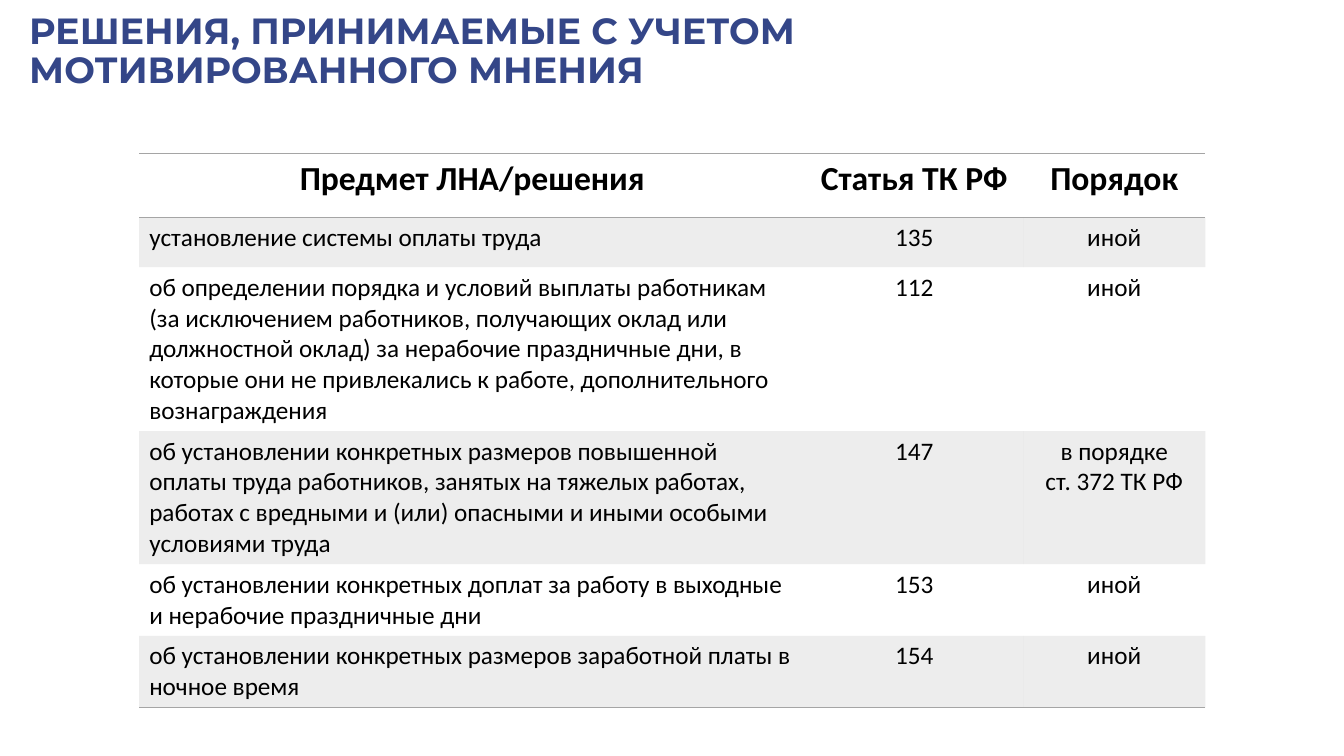
import dataclasses

import pptx
import pptx.dml.color
import pptx.enum.text
import pptx.oxml
import pptx.oxml.ns
import pptx.util

Pt = pptx.util.Pt
ALIGN = pptx.enum.text.PP_ALIGN
GREY = "A5A5A5"
NO_STYLE = "{2D5ABB26-0587-4C30-8999-92F81FD0307C}"
COLUMN_WIDTHS = (475.9, 155.5, 130.2)


@dataclasses.dataclass(frozen=True)
class Decision:
    subject: str
    article: str
    procedure: tuple[str, ...]
    height: float
    size: float = 18
    header: bool = False
    shaded: bool = False
    ruled_top: bool = False
    ruled_bottom: bool = False


DECISIONS = (
    Decision("Предмет ЛНА/решения", "Статья ТК РФ", ("Порядок",), 46, size=24,
             header=True, ruled_top=True, ruled_bottom=True),
    Decision("установление системы оплаты труда", "135", ("иной",), 35.5, shaded=True),
    Decision("об определении порядка и условий выплаты работникам (за исключением "
             "работников, получающих оклад или должностной оклад) за нерабочие "
             "праздничные дни, в которые они не привлекались к работе, "
             "дополнительного вознаграждения", "112", ("иной",), 117),
    Decision("об установлении конкретных размеров повышенной оплаты труда работников, "
             "занятых на тяжелых работах, работах с вредными и (или) опасными и иными "
             "особыми условиями труда", "147", ("в порядке", "ст. 372 ТК РФ"), 95,
             shaded=True),
    Decision("об установлении конкретных доплат за работу в выходные и нерабочие "
             "праздничные дни", "153", ("иной",), 51),
    Decision("об установлении конкретных размеров заработной платы в ночное время",
             "154", ("иной",), 51, shaded=True, ruled_bottom=True),
)


def paint(target, color: str) -> None:
    target.rgb = pptx.dml.color.RGBColor.from_string(color)


def add_run(paragraph, text: str, font: str, size: float, color: str, bold: bool) -> None:
    run = paragraph.add_run()
    run.text = text
    run.font.name = font
    run.font.size = Pt(size)
    run.font.bold = bold
    paint(run.font.color, color)


def shade(cell) -> None:
    cell.fill.solid()
    paint(cell.fill.fore_color, GREY)
    color = cell._tc.tcPr.find(".//" + pptx.oxml.ns.qn("a:srgbClr"))
    color.append(pptx.oxml.parse_xml(
        f'<a:alpha {pptx.oxml.ns.nsdecls("a")} val="20000"/>'))


def rule(cell, side: str) -> None:
    cell._tc.get_or_add_tcPr().insert(0, pptx.oxml.parse_xml(
        f'<a:{side} {pptx.oxml.ns.nsdecls("a")} w="{Pt(1)}">'
        f'<a:solidFill><a:srgbClr val="{GREY}"/></a:solidFill></a:{side}>'))


def fill_cell(cell, lines: tuple[str, ...], decision: Decision, centred: bool) -> None:
    for index, line in enumerate(lines):
        frame = cell.text_frame
        paragraph = frame.add_paragraph() if index else frame.paragraphs[0]
        paragraph.alignment = ALIGN.CENTER if centred else ALIGN.LEFT
        add_run(paragraph, line, "Calibri", decision.size, "000000", decision.header)
    if decision.shaded:
        shade(cell)
    else:
        cell.fill.background()
    if decision.ruled_bottom:
        rule(cell, "lnB")
    if decision.ruled_top:
        rule(cell, "lnT")


def add_heading(slide) -> None:
    heading = slide.shapes.title
    heading.left, heading.top = Pt(13.7), Pt(13.7)
    heading.width, heading.height = Pt(749.5), Pt(47.5)
    frame = heading.text_frame
    frame.word_wrap = True
    frame.auto_size = pptx.enum.text.MSO_AUTO_SIZE.NONE
    frame.vertical_anchor = pptx.enum.text.MSO_ANCHOR.MIDDLE
    paragraph = frame.paragraphs[0]
    paragraph.alignment = ALIGN.LEFT
    paragraph.line_spacing = 0.9
    add_run(paragraph, "РЕШЕНИЯ, ПРИНИМАЕМЫЕ С УЧЕТОМ МОТИВИРОВАННОГО МНЕНИЯ",
            "Montserrat", 26, "344688", True)


def add_decisions(slide) -> None:
    decisions = slide.shapes.add_table(
        len(DECISIONS), len(COLUMN_WIDTHS), Pt(99.4), Pt(109.4),
        Pt(sum(COLUMN_WIDTHS)), Pt(sum(d.height for d in DECISIONS))).table
    decisions.horz_banding = False
    decisions._tbl.tblPr.find(pptx.oxml.ns.qn("a:tableStyleId")).text = NO_STYLE
    for column, width in zip(decisions.columns, COLUMN_WIDTHS):
        column.width = Pt(width)
    for row, decision in zip(decisions.rows, DECISIONS):
        row.height = Pt(decision.height)
        contents = ((decision.subject,), (decision.article,), decision.procedure)
        for index, (cell, lines) in enumerate(zip(row.cells, contents)):
            fill_cell(cell, lines, decision, decision.header or index > 0)


def main() -> None:
    presentation = pptx.Presentation()
    presentation.slide_width, presentation.slide_height = Pt(960), Pt(540)
    slide = presentation.slides.add_slide(presentation.slide_layouts[5])
    add_heading(slide)
    add_decisions(slide)
    presentation.save("out.pptx")


if __name__ == "__main__":
    main()
